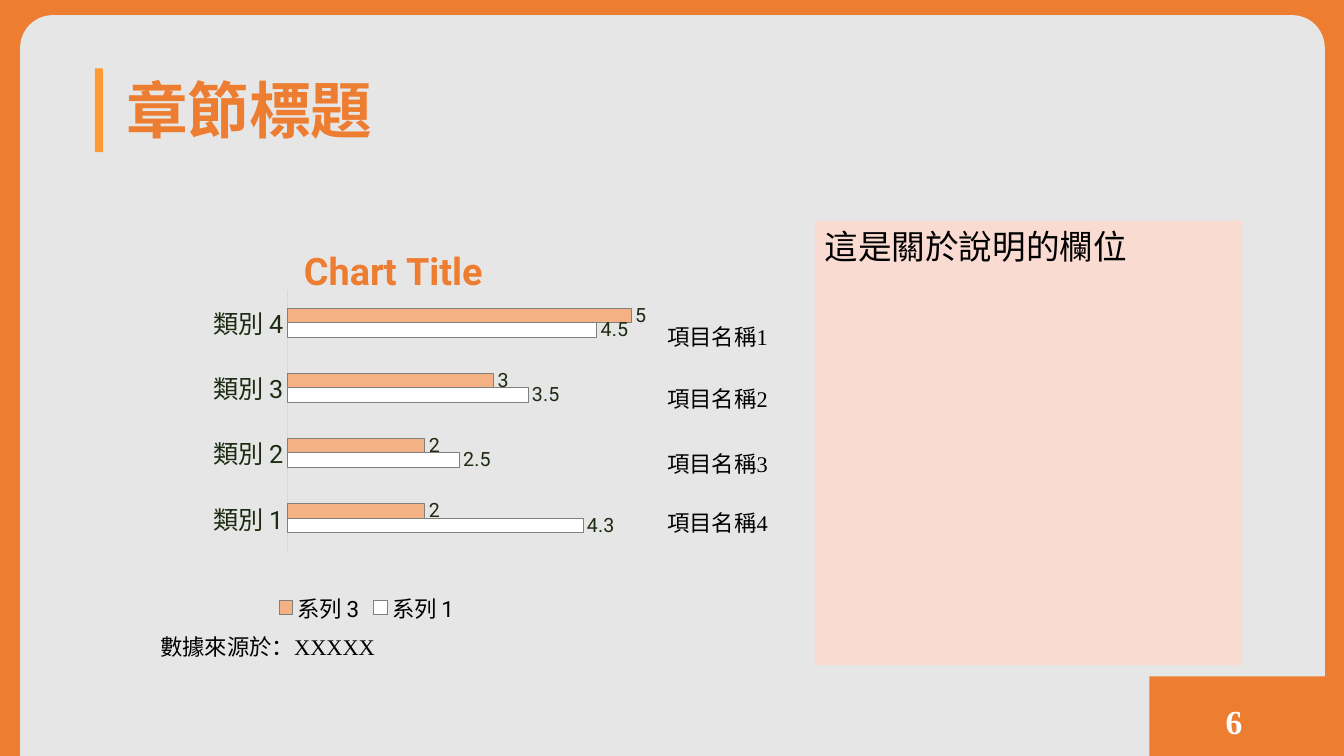
from lxml import etree
from pptx import Presentation
from pptx.chart.data import CategoryChartData
from pptx.dml.color import RGBColor
from pptx.enum.chart import XL_CHART_TYPE, XL_LABEL_POSITION, XL_LEGEND_POSITION, XL_TICK_LABEL_POSITION, XL_TICK_MARK
from pptx.enum.shapes import MSO_SHAPE
from pptx.enum.text import MSO_ANCHOR, MSO_AUTO_SIZE, PP_ALIGN
from pptx.oxml.ns import qn
from pptx.util import Inches, Pt

ORANGE = RGBColor(0xED, 0x7D, 0x31)
AMBER = RGBColor(0xFF, 0x99, 0x33)
PEACH = RGBColor(0xF4, 0xB1, 0x83)
PINK = RGBColor(0xF9, 0xDB, 0xD2)
PALE = RGBColor(0xE7, 0xE6, 0xE6)
RULE = RGBColor(0xD9, 0xD9, 0xD9)
GREY = RGBColor(0x80, 0x80, 0x80)
GREEN = RGBColor(0x1C, 0x2B, 0x12)
BLACK = RGBColor(0, 0, 0)
WHITE = RGBColor(0xFF, 0xFF, 0xFF)

SERIF, SANS = "Times New Roman", "Roboto"
BAR = XL_CHART_TYPE.BAR_CLUSTERED
OUT = XL_LABEL_POSITION.OUTSIDE_END
FOOT = XL_LEGEND_POSITION.BOTTOM
NEXT = XL_TICK_LABEL_POSITION.NEXT_TO_AXIS
NONE = XL_TICK_MARK.NONE
RECT, PANEL = MSO_SHAPE.RECTANGLE, MSO_SHAPE.ROUND_2_SAME_RECTANGLE
LEFT, RIGHT = PP_ALIGN.LEFT, PP_ALIGN.RIGHT
TOP, MID = MSO_ANCHOR.TOP, MSO_ANCHOR.MIDDLE
GROW = MSO_AUTO_SIZE.SHAPE_TO_FIT_TEXT

TITLE = "章節標題"
NOTE = "這是關於說明的欄位"
SOURCE = "數據來源於：XXXXX"
PAGE = "6"
HEAD = "Chart Title"
CATS = ["類別 1", "類別 2", "類別 3", "類別 4"]
SERIES = [
    ("系列 1", (4.3, 2.5, 3.5, 4.5), WHITE),
    ("系列 3", (2, 2, 3, 5), PEACH),
]
ITEMS = [("項目名稱1", 3.16), ("項目名稱2", 3.77), ("項目名稱3", 4.42), ("項目名稱4", 5)]


def style(font, size, color, name=SERIF, bold=False):
    """Set size, colour, face and weight of a font."""
    font.size, font.name, font.bold = Pt(size), name, bold
    font.color.rgb = color


def write(frame, text, size, color, bold=False, align=LEFT):
    """Put one styled run in the first paragraph of a frame."""
    para = frame.paragraphs[0]
    para.alignment = align
    run = para.add_run()
    run.text = text
    style(run.font, size, color, bold=bold)
    return para


def block(slide, kind, box, color):
    """Add a plain filled shape without line or shadow."""
    shape = slide.shapes.add_shape(kind, *map(Inches, box))
    shape.shadow.inherit = False
    shape.fill.solid()
    shape.fill.fore_color.rgb = color
    shape.line.fill.background()
    return shape


def label(slide, box, text, size=16, color=BLACK, wrap=True, **look):
    """Add a text box and return its frame."""
    frame = slide.shapes.add_textbox(*map(Inches, box)).text_frame
    frame.word_wrap = wrap
    write(frame, text, size, color, **look)
    return frame


def place(node, index, **parts):
    """Give a chart part a manual layout."""
    for old in node.findall(qn("c:layout")):
        node.remove(old)
    layout = etree.Element(qn("c:layout"))
    manual = etree.SubElement(layout, qn("c:manualLayout"))
    for key, value in parts.items():
        etree.SubElement(manual, qn("c:" + key)).set("val", str(value))
    node.insert(index, layout)


def graph(slide):
    """Add the clustered bar chart."""
    data = CategoryChartData()
    data.categories = CATS
    for name, values, _ in SERIES:
        data.add_series(name, values)
    box = map(Inches, (0.19, 2.34, 6.89, 3.89))
    chart = slide.shapes.add_chart(BAR, *box, data).chart
    style(chart.font, 10, GREEN, SANS)

    chart.has_title = True
    run = chart.chart_title.text_frame.paragraphs[0].add_run()
    run.text = HEAD
    style(run.font, 27, ORANGE, SANS, True)
    place(chart.chart_title._element, 1, xMode="edge", yMode="edge", x=0.4, y=0.01)
    area = chart._chartSpace.xpath("c:chart/c:plotArea")[0]
    place(area, 0, layoutTarget="inner", xMode="edge", yMode="edge",
          x=0.386, y=0.138, w=0.594, h=0.665)

    chart.has_legend = True
    chart.legend.position = FOOT
    chart.legend.include_in_layout = False
    style(chart.legend.font, 16, BLACK, SANS)

    axis = chart.category_axis
    axis.major_tick_mark = axis.minor_tick_mark = NONE
    axis.tick_label_position = NEXT
    axis.format.line.color.rgb = RULE
    axis.format.line.width = Pt(0.75)
    style(axis.tick_labels.font, 18, GREEN, SANS)
    scale = chart.value_axis
    scale.visible = scale.has_major_gridlines = False
    scale.major_tick_mark = scale.minor_tick_mark = NONE
    scale.minimum_scale, scale.maximum_scale = 0, 6

    plot = chart.plots[0]
    plot.gap_width, plot.overlap, plot.vary_by_categories = 250, 0, False
    for series, (_, _, color) in zip(plot.series, SERIES):
        series.invert_if_negative = False
        series.format.fill.solid()
        series.format.fill.fore_color.rgb = color
        series.format.line.color.rgb = GREY
        series.format.line.width = Pt(0.5)
        marks = series.data_labels
        marks.show_value, marks.position = True, OUT
        style(marks.font, 14, GREEN, SANS)


def main():
    """Build and save the slide."""
    deck = Presentation()
    deck.slide_width, deck.slide_height = Inches(13.33), Inches(7.5)
    slide = deck.slides.add_slide(deck.slide_layouts[5])
    slide.background.fill.solid()
    slide.background.fill.fore_color.rgb = ORANGE

    panel = block(slide, PANEL, (0.2, 0.15, 12.94, 7.35), PALE)
    panel.adjustments[0] = 0.044
    block(slide, RECT, (11.4, 6.71, 1.93, 0.79), ORANGE)
    block(slide, RECT, (0.94, 0.68, 0.08, 0.83), AMBER)

    title = slide.shapes.title
    slide.shapes._spTree.append(title._element)
    title.left, title.top, title.width, title.height = map(Inches, (1.15, 0.4, 11.27, 1.45))
    title.text_frame.vertical_anchor = MID
    write(title.text_frame, TITLE, 44, ORANGE, True).line_spacing = 0.9

    page = label(slide, (9.42, 6.95, 3, 0.4), PAGE, 24, WHITE, bold=True, align=RIGHT)
    page.vertical_anchor = MID
    label(slide, (1.49, 6.23, 2.7, 0.37), SOURCE).auto_size = GROW

    note = block(slide, RECT, (8.08, 2.19, 4.24, 4.41), PINK).text_frame
    note.vertical_anchor = TOP
    write(note, NOTE, 24, BLACK)

    graph(slide)
    for text, top in ITEMS:
        label(slide, (6.52, top, 1.23, 0.37), text, wrap=False).auto_size = GROW
    deck.save("out.pptx")


if __name__ == "__main__":
    main()
